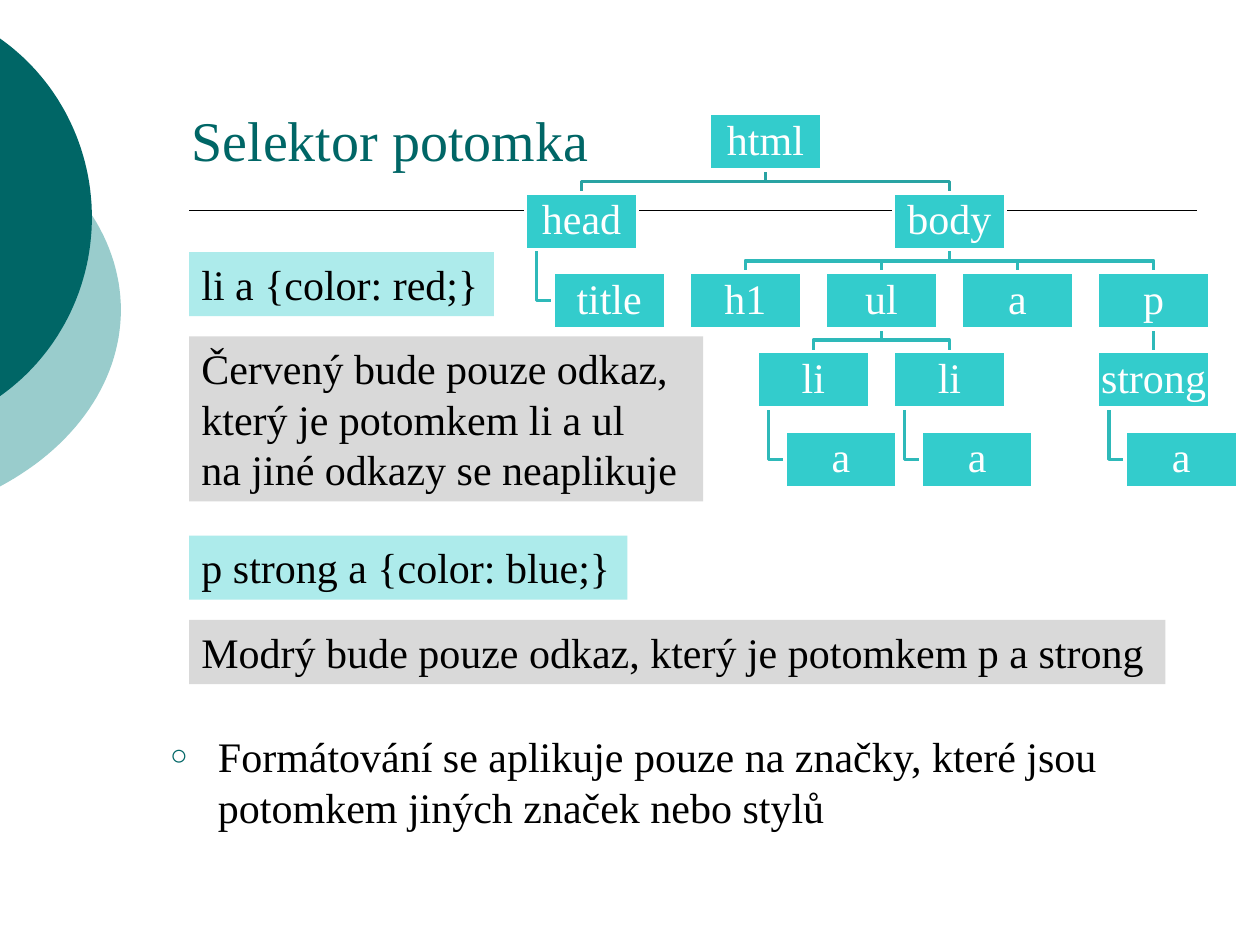
import math

import pptx
import pptx.dml.color
import pptx.enum.shapes
import pptx.enum.text
import pptx.oxml
import pptx.oxml.ns
import pptx.util

Inches = pptx.util.Inches
Pt = pptx.util.Pt
ALIGN = pptx.enum.text.PP_ALIGN
ANCHOR = pptx.enum.text.MSO_ANCHOR

COLORS = {
    "dark": "006666", "pale": "99CCCC", "black": "000000", "white": "FFFFFF",
    "node": "33CCCC", "branch_top": "29A3A3", "branch": "2EB9B9",
    "code": "ADEBEB", "note": "D9D9D9",
}

# Tree layout in inches
NODE_WIDTH, NODE_HEIGHT = 0.89, 0.45
TREE_TOP, ROW_STEP = 0.9, 0.63
COLUMN_LEFT, COLUMN_STEP = 5.47, 1.08
HANG_INDENT, HANG_STEM = 0.22, 0.09


def column(number):
    return COLUMN_LEFT + number * COLUMN_STEP


# Each node is (text, left, children); left None hangs it beside its parent's stem
HANGING_LINK = ("a", None, [])
TREE = ("html", 5.63, [
    ("head", 4.17, [("title", None, [])]),
    ("body", column(1.5), [
        ("h1", column(0), []),
        ("ul", column(1), [("li", column(0.5), [HANGING_LINK]),
                           ("li", column(1.5), [HANGING_LINK])]),
        ("a", column(2), []),
        ("p", column(3), [("strong", column(3), [HANGING_LINK])]),
    ]),
])


class SlideBuilder:
    font = "Times New Roman"
    text_size = 24

    def __init__(self, slide):
        self.slide = slide
        self.shapes = slide.shapes

    def color(self, name):
        return pptx.dml.color.RGBColor.from_string(COLORS[name])

    def style_text(self, text_frame, color, size=text_size, align=ALIGN.LEFT):
        for paragraph in text_frame.paragraphs:
            paragraph.alignment = align
            for run in paragraph.runs:
                run.font.name = self.font
                run.font.size = Pt(size)
                run.font.color.rgb = self.color(color)

    def place(self, shape, left, top, width, height):
        shape.left, shape.top = Inches(left), Inches(top)
        shape.width, shape.height = Inches(width), Inches(height)

    def title(self, text, *box):
        title = self.shapes.title
        self.place(title, *box)
        title.text_frame.text = text
        title.text_frame.vertical_anchor = ANCHOR.BOTTOM
        self.style_text(title.text_frame, "dark", size=32)

    def bullet(self, text, *box):
        body = self.slide.placeholders[1]
        self.place(body, *box)
        body.text_frame.text = text
        self.style_text(body.text_frame, "black")
        paragraph = body.text_frame.paragraphs[0]
        paragraph.space_before = Pt(4.8)
        properties = paragraph._p.get_or_add_pPr()
        properties.set("marL", str(Inches(0.38)))
        properties.set("indent", str(-Inches(0.38)))
        namespace = pptx.oxml.ns.nsdecls("a")
        for xml in (f'<a:buClr {namespace}><a:srgbClr val="{COLORS["dark"]}"/></a:buClr>',
                    f'<a:buSzPct {namespace} val="70000"/>',
                    f'<a:buFont {namespace} typeface="{self.font}"/>',
                    f'<a:buChar {namespace} char="○"/>'):
            properties.append(pptx.oxml.parse_xml(xml))

    def rectangle(self, text, fill, text_color, box, align=ALIGN.LEFT):
        shape = self.shapes.add_shape(
            pptx.enum.shapes.MSO_SHAPE.RECTANGLE, *map(Inches, box))
        shape.shadow.inherit = False
        shape.fill.solid()
        shape.fill.fore_color.rgb = self.color(fill)
        shape.line.fill.background()
        frame = shape.text_frame
        frame.text = text
        frame.word_wrap = True
        self.style_text(frame, text_color, align=align)
        return shape

    def panel(self, text, fill, *box):
        shape = self.rectangle(text, fill, "black", box)
        shape.text_frame.vertical_anchor = ANCHOR.TOP

    def node(self, text, left, top):
        shape = self.rectangle(text, "node", "white",
                               (left, top, NODE_WIDTH, NODE_HEIGHT), ALIGN.CENTER)
        shape.line.color.rgb = self.color("white")
        shape.line.width = Pt(2)
        frame = shape.text_frame
        frame.vertical_anchor = ANCHOR.MIDDLE
        frame.margin_left = frame.margin_right = Inches(0.02)
        frame.margin_top = frame.margin_bottom = Inches(0.02)
        frame.paragraphs[0].line_spacing = 0.9

    def line(self, start, end, color, width):
        connector = self.shapes.add_connector(
            pptx.enum.shapes.MSO_CONNECTOR.STRAIGHT, *map(Inches, (*start, *end)))
        connector.line.color.rgb = self.color(color)
        connector.line.width = Pt(width)
        connector._element.spPr.append(pptx.oxml.parse_xml(
            f'<a:effectLst {pptx.oxml.ns.nsdecls("a")}/>'))

    def outline(self, points, close):
        points = [(Inches(x), Inches(y)) for x, y in points]
        builder = self.shapes.build_freeform(*points[0])
        builder.add_line_segments(points[1:], close=close)
        shape = builder.convert_to_shape()
        shape.shadow.inherit = False
        return shape

    def branch(self, points, color):
        shape = self.outline(points, close=False)
        shape.fill.background()
        shape.line.color.rgb = self.color(color)
        shape.line.width = Pt(2)

    def clipped_ellipse(self, color, left, top, width, height, steps=60):
        """Draw the part of an ellipse that lies right of the slide's left edge."""
        radius_x, radius_y = width / 2, height / 2
        center_x, center_y = left + radius_x, top + radius_y
        limit = math.acos(-center_x / radius_x)
        angles = [limit * (2 * step / steps - 1) for step in range(steps + 1)]
        shape = self.outline([(center_x + radius_x * math.cos(angle),
                               center_y + radius_y * math.sin(angle))
                              for angle in angles], close=True)
        shape.fill.solid()
        shape.fill.fore_color.rgb = self.color(color)
        shape.line.fill.background()

    def tree_branches(self, node, left, row=0):
        """Draw the branches below a node and return the nodes with their places."""
        text, _, children = node
        top = TREE_TOP + row * ROW_STEP
        bottom, child_top = top + NODE_HEIGHT, top + ROW_STEP
        middle = (bottom + child_top) / 2
        center = left + NODE_WIDTH / 2
        color = "branch" if row else "branch_top"
        placed = [(text, left, top)]
        for child in children:
            child_left = child[1]
            if child_left is None:
                child_left = left + HANG_INDENT
                stem, child_middle = left + HANG_STEM, child_top + NODE_HEIGHT / 2
                self.branch([(stem, bottom), (stem, child_middle),
                             (child_left, child_middle)], color)
            elif child_left == left:
                self.line((center, bottom), (center, child_top), color, 2)
            else:
                child_center = child_left + NODE_WIDTH / 2
                self.branch([(center, bottom), (center, middle),
                             (child_center, middle), (child_center, child_top)], color)
            placed += self.tree_branches(child, child_left, row + 1)
        return placed


def main():
    presentation = pptx.Presentation()
    presentation.slide_width, presentation.slide_height = Inches(10), Inches(7.5)
    builder = SlideBuilder(presentation.slides.add_slide(presentation.slide_layouts[1]))

    # Background decoration
    builder.clipped_ellipse("pale", -3.54, 0.75, 4.5, 3.42)
    builder.clipped_ellipse("dark", -2.65, 0, 3.38, 3.45)
    builder.line((1.5, 1.67), (9.5, 1.67), "black", 1)

    # Title and list
    builder.title("Selektor potomka", 1.42, 0.17, 8, 1.25)
    builder.bullet("Formátování se aplikuje pouze na značky, které jsou "
                   "potomkem jiných značek nebo stylů", 1.25, 5.75, 8.25, 1.09)

    # Document tree
    for text, left, top in builder.tree_branches(TREE, TREE[1]):
        builder.node(text, left, top)

    # Selectors and their explanations
    builder.panel("li a {color: red;}", "code", 1.5, 2, 2.42, 0.51)
    builder.panel("Červený bude pouze odkaz, který je potomkem li a ul\n"
                  "na jiné odkazy se neaplikuje", "note", 1.5, 2.67, 4.08, 1.31)
    builder.panel("p strong a {color: blue;}", "code", 1.5, 4.25, 3.48, 0.51)
    builder.panel("Modrý bude pouze odkaz, který je potomkem p a strong",
                  "note", 1.5, 4.92, 7.75, 0.51)

    presentation.save("out.pptx")


if __name__ == "__main__":
    main()
